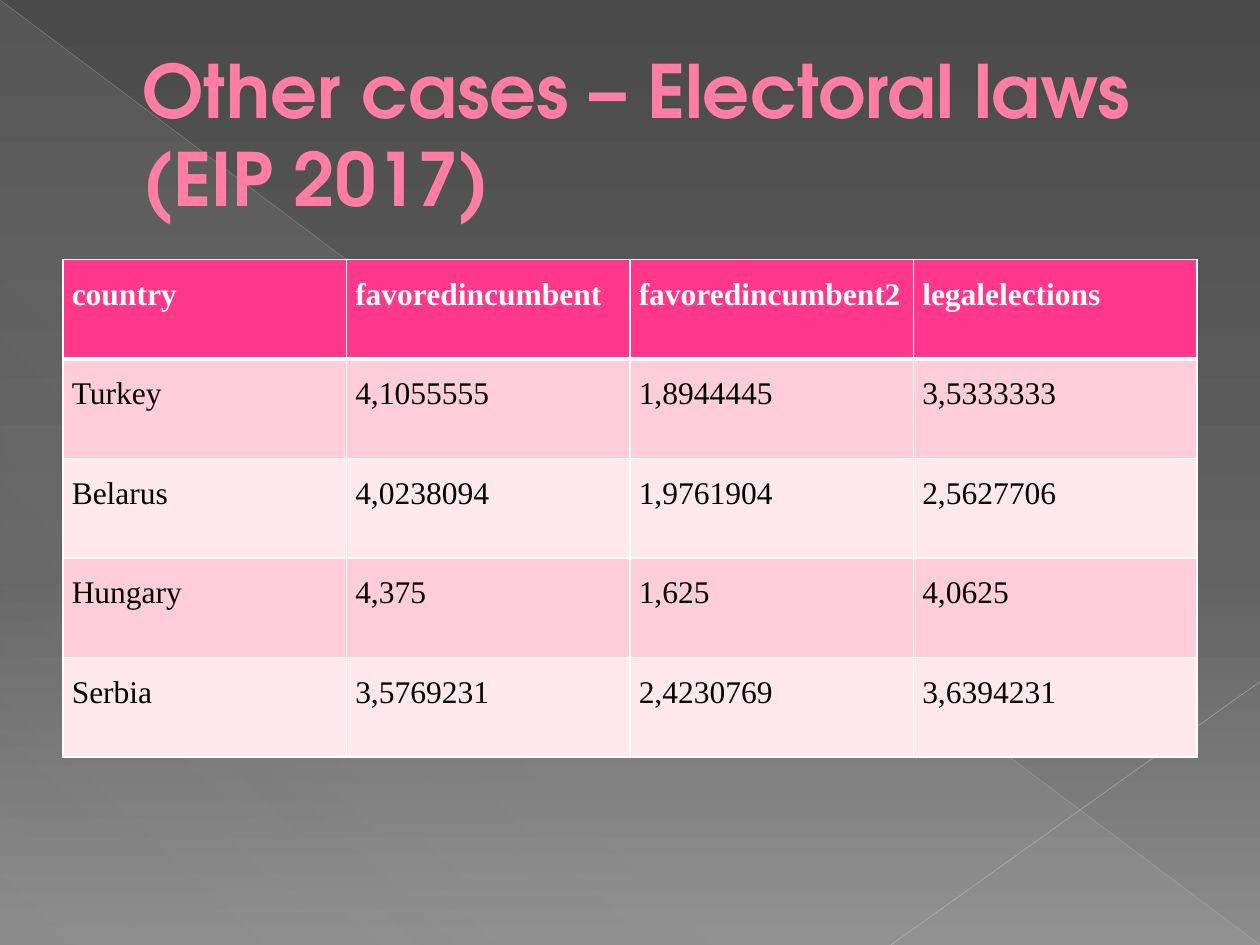
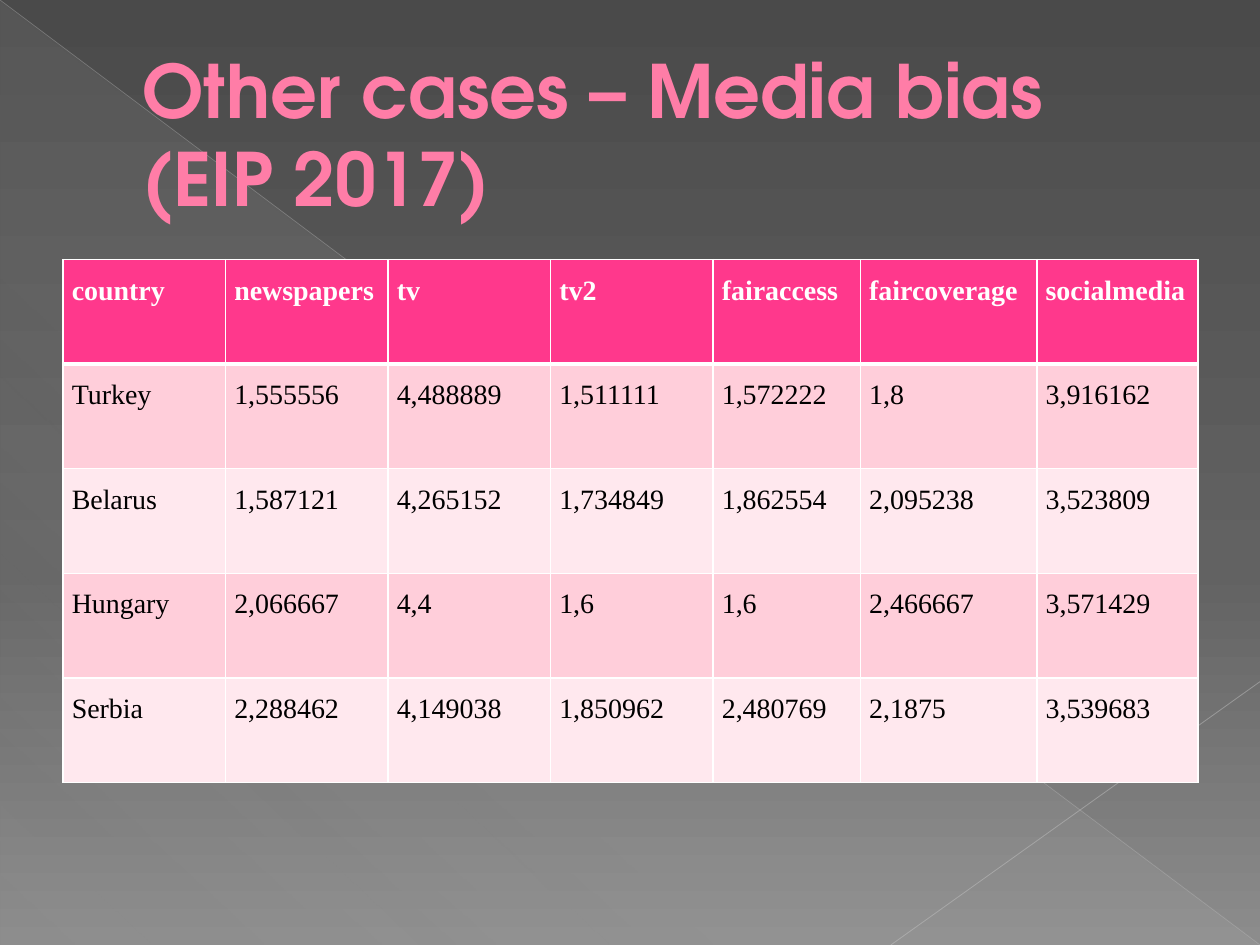
from pptx import Presentation
from pptx.dml.color import RGBColor
from pptx.enum.shapes import MSO_CONNECTOR, MSO_SHAPE
from pptx.enum.text import MSO_ANCHOR, PP_ALIGN
from pptx.oxml import parse_xml
from pptx.oxml.ns import nsdecls, qn
from pptx.oxml.xmlchemy import OxmlElement
from pptx.util import Inches, Pt

# Content: title, text size, row height, column widths, rows
SLIDES = [
    {"title": "Other cases – Electoral laws (EIP 2017)",
     "size": 18, "high": 0.79, "cols": [2.25] * 4,
     "rows": [
         ("country", "favoredincumbent", "favoredincumbent2", "legalelections"),
         ("Turkey", "4,1055555", "1,8944445", "3,5333333"),
         ("Belarus", "4,0238094", "1,9761904", "2,5627706"),
         ("Hungary", "4,375", "1,625", "4,0625"),
         ("Serbia", "3,5769231", "2,4230769", "3,6394231")]},
    {"title": "Other cases – Media bias (EIP 2017)",
     "size": 16, "high": 0.83, "cols": [1.29] * 4 + [1.17, 1.4, 1.28],
     "rows": [
         ("country", "newspapers", "tv", "tv2", "fairaccess",
          "faircoverage", "socialmedia"),
         ("Turkey", "1,555556", "4,488889", "1,511111", "1,572222",
          "1,8", "3,916162"),
         ("Belarus", "1,587121", "4,265152", "1,734849", "1,862554",
          "2,095238", "3,523809"),
         ("Hungary", "2,066667", "4,4", "1,6", "1,6", "2,466667", "3,571429"),
         ("Serbia", "2,288462", "4,149038", "1,850962", "2,480769",
          "2,1875", "3,539683")]},
]

# Shared look
WIDE, TALL = 10, 7.5
EDGE = WIDE / 20
SPAN = WIDE - 2 * EDGE
HEAD_FONT, BODY_FONT = "TeX Gyre Adventor", "Times New Roman"
WHITE = RGBColor(0xFF, 0xFF, 0xFF)
BLACK = RGBColor(0x00, 0x00, 0x00)
ROSE = RGBColor(0xFF, 0x7D, 0xA7)
WINE = RGBColor(0xB1, 0x27, 0x61)
PINK = RGBColor(0xFF, 0x38, 0x8C)
BANDS = [RGBColor(0xFF, 0xE8, 0xEE), RGBColor(0xFF, 0xCE, 0xDA)]
MIST = RGBColor(0xD2, 0xD2, 0xD2)
# Gradient stops: position, colour, opacity (percent)
BACK = [(0, RGBColor(0x4A, 0x4A, 0x4A), 100),
        (60, RGBColor(0x62, 0x62, 0x62), 100),
        (100, RGBColor(0x8C, 0x8C, 0x8C), 100)]
VEIL = [(0, MIST, 10), (70, MIST, 8), (100, MIST, 1)]
# Lines: start, end, colour, width, opacity
LINES = [((0, 0), (WIDE, TALL), RGBColor(0xBF, 0xBF, 0xBF), 0.39, 35),
         ((WIDE, 5.41), (7.07, TALL), RGBColor(0xC6, 0xC6, 0xC6), 0.47, 45)]


def tint(color, alpha=100):
    return (f'<a:srgbClr val="{color}"><a:alpha val="{alpha * 1000}"/>'
            '</a:srgbClr>')


def stroke(tag, color, width):
    return parse_xml(f'<a:{tag} {nsdecls("a")} w="{Pt(width)}"><a:solidFill>'
                     f'{tint(color)}</a:solidFill></a:{tag}>')


def blend(part, fill, stops, angle):
    fill.gradient()
    fill.gradient_angle = 360 - angle
    old = part.element.find(".//" + qn("a:gsLst"))
    marks = "".join(f'<a:gs pos="{pos * 1000}">{tint(color, alpha)}</a:gs>'
                    for pos, color, alpha in stops)
    new = parse_xml(f'<a:gsLst {nsdecls("a")}>{marks}</a:gsLst>')
    old.getparent().replace(old, new)


def write(frame, text, font=BODY_FONT, size=18, color=BLACK, bold=False,
          align=PP_ALIGN.LEFT, space=None, indent=0, edge=None):
    para = frame.paragraphs[0]
    para.alignment, para.line_spacing = align, space
    if indent:
        para._p.get_or_add_pPr().set("marL", str(Inches(indent)))
    run = para.add_run()
    run.text = text
    run.font.name, run.font.size, run.font.bold = font, Pt(size), bold
    run.font.color.rgb = color
    if edge:
        run._r.get_or_add_rPr().insert(0, stroke("ln", edge, 0.5))


def scene(slide):
    """Background, veil and crossing lines."""
    blend(slide, slide.background.fill, BACK, 90)
    veil = slide.shapes.add_shape(MSO_SHAPE.RIGHT_TRIANGLE, 0, 0,
                                  Inches(WIDE), Inches(TALL))
    veil.shadow.inherit = False
    veil.line.fill.background()
    blend(veil, veil.fill, VEIL, 133)
    for start, end, color, width, alpha in LINES:
        line = slide.shapes.add_connector(
            MSO_CONNECTOR.STRAIGHT, *map(Inches, start + end))
        line.line.width = Pt(width)
        line.line.color.rgb = color
        shade = OxmlElement("a:alpha")
        shade.set("val", str(alpha * 1000))
        line.element.spPr.find(".//" + qn("a:srgbClr")).append(shade)
        line.element.spPr.append(OxmlElement("a:effectLst"))


def title(slide, text):
    box = slide.shapes.add_textbox(*map(Inches, (EDGE, 0.29, SPAN, 1.53)))
    frame = box.text_frame
    frame.word_wrap = True
    frame.vertical_anchor = MSO_ANCHOR.MIDDLE
    write(frame, text, font=HEAD_FONT, size=42, color=ROSE, bold=True,
          indent=0.53, edge=WINE)


def grid(slide, rows, cols, high, size):
    table = slide.shapes.add_table(
        len(rows), len(cols),
        *map(Inches, (EDGE, 2.06, SPAN, high * len(rows)))).table
    table.horz_banding = False
    for col, width in zip(table.columns, cols):
        col.width = Inches(width)
    for r, row in enumerate(rows):
        table.rows[r].height = Inches(high)
        head = r == 0
        for c, text in enumerate(row):
            cell = table.cell(r, c)
            cell.margin_left = cell.margin_right = Inches(0.07)
            cell.margin_top = cell.margin_bottom = 0
            # The rule below the header is thick
            sides = {"lnL": 1, "lnR": 1, "lnT": 3 if r == 1 else 1,
                     "lnB": 3 if head else 1}
            for tag, width in sides.items():
                cell._tc.get_or_add_tcPr().append(stroke(tag, WHITE, width))
            cell.fill.solid()
            cell.fill.fore_color.rgb = PINK if head else BANDS[r % 2]
            write(cell.text_frame, text, size=size, bold=head,
                  color=WHITE if head else BLACK,
                  align=PP_ALIGN.JUSTIFY, space=1.5)


def main():
    deck = Presentation()
    deck.slide_width, deck.slide_height = Inches(WIDE), Inches(TALL)
    for item in SLIDES:
        slide = deck.slides.add_slide(deck.slide_layouts[6])
        scene(slide)
        title(slide, item["title"])
        grid(slide, item["rows"], item["cols"], item["high"], item["size"])
    deck.save("out.pptx")


if __name__ == "__main__":
    main()
